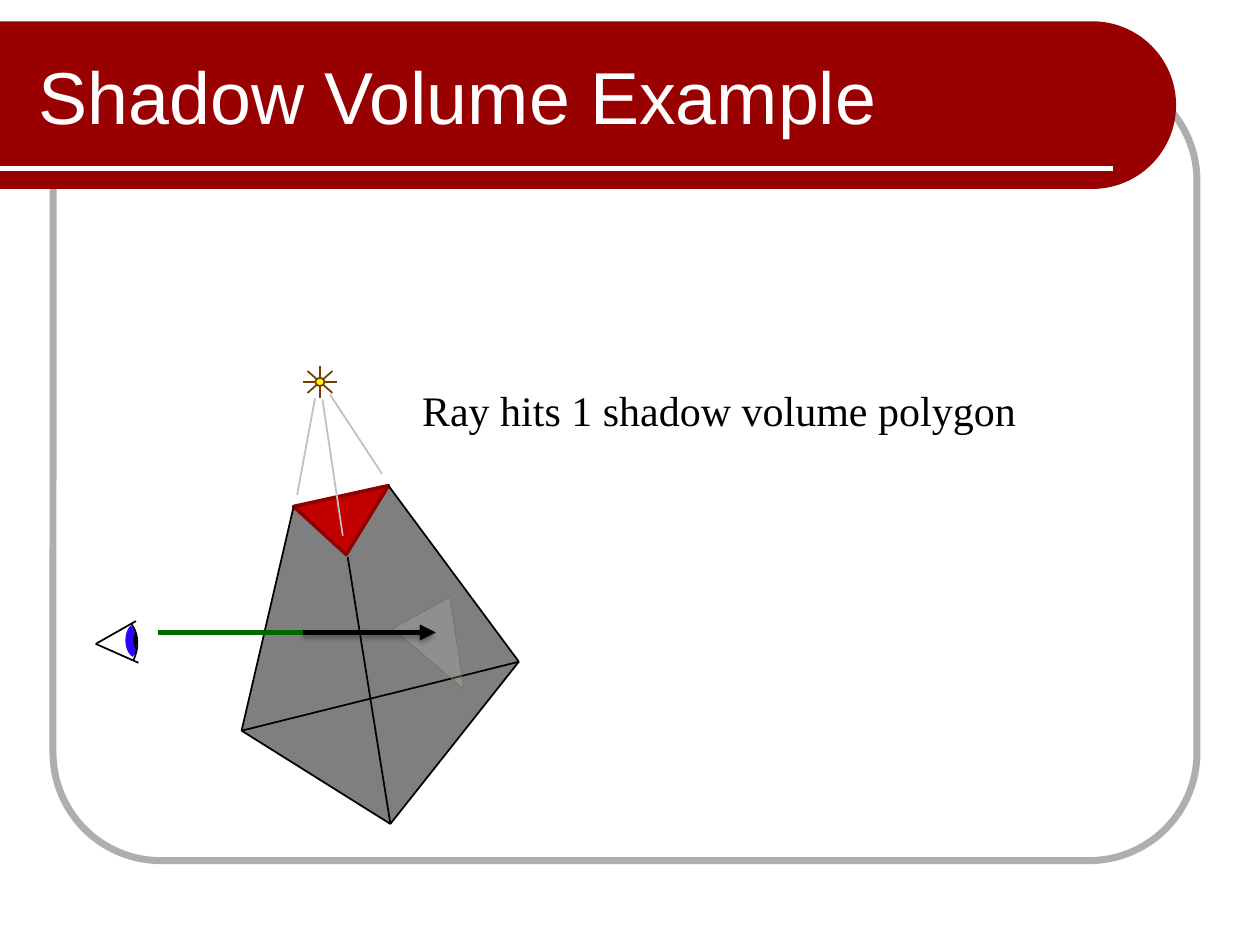
import math

from lxml import etree
from pptx import Presentation
from pptx import util as u
from pptx.dml.color import RGBColor
from pptx.enum import shapes, text
from pptx.oxml.ns import qn

COLORS = {
    "banner": "990000", "frame": "AEAEAE", "white": "FFFFFF", "black": "000000",
    "iris": "3101FF", "sun": "FFFF00", "sun_ray": "783C00",
    "occluder": "C30000", "occluder_edge": "900000",
    "light": "C0C0C0", "hidden_edge": "846648", "view_ray": "006600",
}


def sub(parent, tag, **attrs):
    """Append a child element with the given attributes."""
    return etree.SubElement(parent, qn(tag), {k: str(v) for k, v in attrs.items()})


def bezier(p0, p1, p2, p3, steps=16):
    """Points along a cubic curve."""
    points = []
    for i in range(steps + 1):
        t = i / steps
        weights = ((1 - t) ** 3, 3 * t * (1 - t) ** 2, 3 * t * t * (1 - t), t ** 3)
        points.append(tuple(sum(w * p[axis] for w, p in zip(weights, (p0, p1, p2, p3)))
                            for axis in (0, 1)))
    return points


class Painter:
    """Draws styled elements on one slide; all lengths are in centimetres."""

    title_font = "Arial"
    label_font = "Times New Roman"

    def __init__(self, slide):
        self.slide = slide

    def color(self, name):
        return RGBColor.from_string(COLORS[name])

    def style(self, sp, fill=None, line=None, width=1, alpha=None):
        sp.shadow.inherit = False
        if fill:
            sp.fill.solid()
            sp.fill.fore_color.rgb = self.color(fill)
            if alpha:
                clr = sp._element.spPr.find(qn("a:solidFill"))[0]
                sub(clr, "a:alpha", val=alpha * 1000)
        else:
            sp.fill.background()
        if line:
            sp.line.color.rgb = self.color(line)
            sp.line.width = u.Pt(width)
        else:
            sp.line.fill.background()

    def shape(self, kind, x, y, w, h, **style):
        sp = self.slide.shapes.add_shape(kind, u.Cm(x), u.Cm(y), u.Cm(w), u.Cm(h))
        self.style(sp, **style)
        return sp

    def outline(self, points, close=True, **style):
        first, *rest = [(u.Cm(x), u.Cm(y)) for x, y in points]
        builder = self.slide.shapes.build_freeform(*first)
        builder.add_line_segments(rest, close=close)
        self.style(builder.convert_to_shape(), **style)

    def line(self, start, end, color="black", width=1, arrow=False, shadow=False):
        ends = [u.Cm(v) for v in (*start, *end)]
        c = self.slide.shapes.add_connector(shapes.MSO_CONNECTOR.STRAIGHT, *ends)
        c.line.color.rgb = self.color(color)
        c.line.width = u.Pt(width)
        if arrow:
            sub(c._element.spPr.find(qn("a:ln")), "a:tailEnd", type="triangle")
        effects = sub(c._element.spPr, "a:effectLst")
        if shadow:
            outer = sub(effects, "a:outerShdw", blurRad=u.Pt(3.1), dist=u.Pt(1.8),
                        dir=90 * 60000, rotWithShape=0)
            clr = sub(outer, "a:srgbClr", val=COLORS["black"])
            sub(clr, "a:alpha", val=35000)

    def set_text(self, tf, words, font, size, color):
        tf.text = words
        p = tf.paragraphs[0]
        p.alignment = text.PP_ALIGN.LEFT
        r = p.runs[0]
        r.font.name = font
        r.font.size = u.Pt(size)
        r.font.color.rgb = self.color(color)

    def title(self, words, x, y, w, h):
        sp = self.slide.shapes.title
        sp.left, sp.top, sp.width, sp.height = u.Cm(x), u.Cm(y), u.Cm(w), u.Cm(h)
        tf = sp.text_frame
        self.set_text(tf, words, self.title_font, 42, "white")
        tf.vertical_anchor = text.MSO_ANCHOR.MIDDLE
        # Bring the title in front of the banner
        sp._element.getparent().append(sp._element)

    def label(self, words, x, y, w, h):
        sp = self.slide.shapes.add_textbox(u.Cm(x), u.Cm(y), u.Cm(w), u.Cm(h))
        sp.text_frame.word_wrap = False
        self.set_text(sp.text_frame, words, self.label_font, 24, "black")


def draw_background(s):
    frame = s.shape(shapes.MSO_SHAPE.ROUNDED_RECTANGLE, 1.07, 1.47, 23.06, 15.88,
                    line="frame", width=4)
    frame.adjustments[0] = 0.137
    cx, cy, radius = 22.02, 2.12, 1.69
    cap = [(cx + radius * math.cos(math.radians(a)), cy + radius * math.sin(math.radians(a)))
           for a in range(-90, 91, 3)]
    s.outline([(0, cy - radius), *cap, (0, cy + radius)], fill="banner")
    s.line((0, 3.39), (22.43, 3.39), "white", 3)


def draw_eye(s):
    s.outline([(2.72, 12.73), (2.77, 12.9), (2.74, 13.11), (2.67, 13.03), (2.67, 12.75)],
              fill="black")
    s.outline(bezier((2.72, 13.18), (2.57, 13.08), (2.58, 12.76), (2.69, 12.67)),
              close=False, line="iris", width=4.5)
    corner = (1.93, 12.98)
    for lid in ((2.74, 12.52), (2.79, 13.36)):
        s.line(corner, lid)
    s.outline(bezier((2.64, 12.57), (2.81, 12.78), (2.8, 13.08), (2.69, 13.31)),
              close=False, line="black")


def draw_sun(s):
    cx, cy = 6.45, 7.7
    for dx, dy in ((0, 0.32), (0.35, 0), (0.25, 0.22), (0.25, -0.22)):
        s.line((cx - dx, cy - dy), (cx + dx, cy + dy), "sun_ray")
    w, h = 0.18, 0.16
    s.shape(shapes.MSO_SHAPE.OVAL, cx - w / 2, cy - h / 2, w, h, fill="sun", line="sun_ray")


def main():
    prs = Presentation()
    prs.slide_width, prs.slide_height = u.Cm(25.4), u.Cm(19.05)
    s = Painter(prs.slides.add_slide(prs.slide_layouts[5]))

    draw_background(s)
    s.title("Shadow Volume Example", 0.53, 0.64, 19.79, 2.54)
    s.label("Ray hits 1 shadow volume polygon", 8.26, 7.62, 12.6, 1.27)

    # Corners of the occluder, then of the far end of its shadow volume
    left, front, right = (5.92, 10.21), (6.98, 11.18), (7.83, 9.79)
    far_left, far_front, far_right = (4.87, 14.73), (7.87, 16.61), (10.46, 13.34)

    s.outline([left, front, right, far_right, far_front, far_left], fill="black", alpha=50)
    draw_eye(s)
    s.line(far_left, far_right)
    draw_sun(s)
    s.outline([left, right, front], fill="occluder", line="occluder_edge", width=2)
    s.line(right, far_right)
    s.line((7.01, 11.23), far_front)
    s.outline([far_left, far_front, far_right], close=False, line="black")
    s.line(left, far_left)

    for start, end in (((6.35, 8.03), (5.99, 9.98)),
                       ((6.5, 8.05), (6.91, 10.8)),
                       ((6.65, 7.95), (7.7, 9.55))):
        s.line(start, end, "light")

    s.outline([(7.92, 12.67), (9.07, 12.04), (9.35, 13.89)],
              fill="light", alpha=25, line="hidden_edge", width=0.25)
    ray_y = 12.75
    s.line((3.18, ray_y), (8.78, ray_y), "view_ray", 3, arrow=True)
    s.line((6.1, ray_y), (8.78, ray_y), "black", 3, arrow=True, shadow=True)

    prs.save("out.pptx")


if __name__ == "__main__":
    main()
